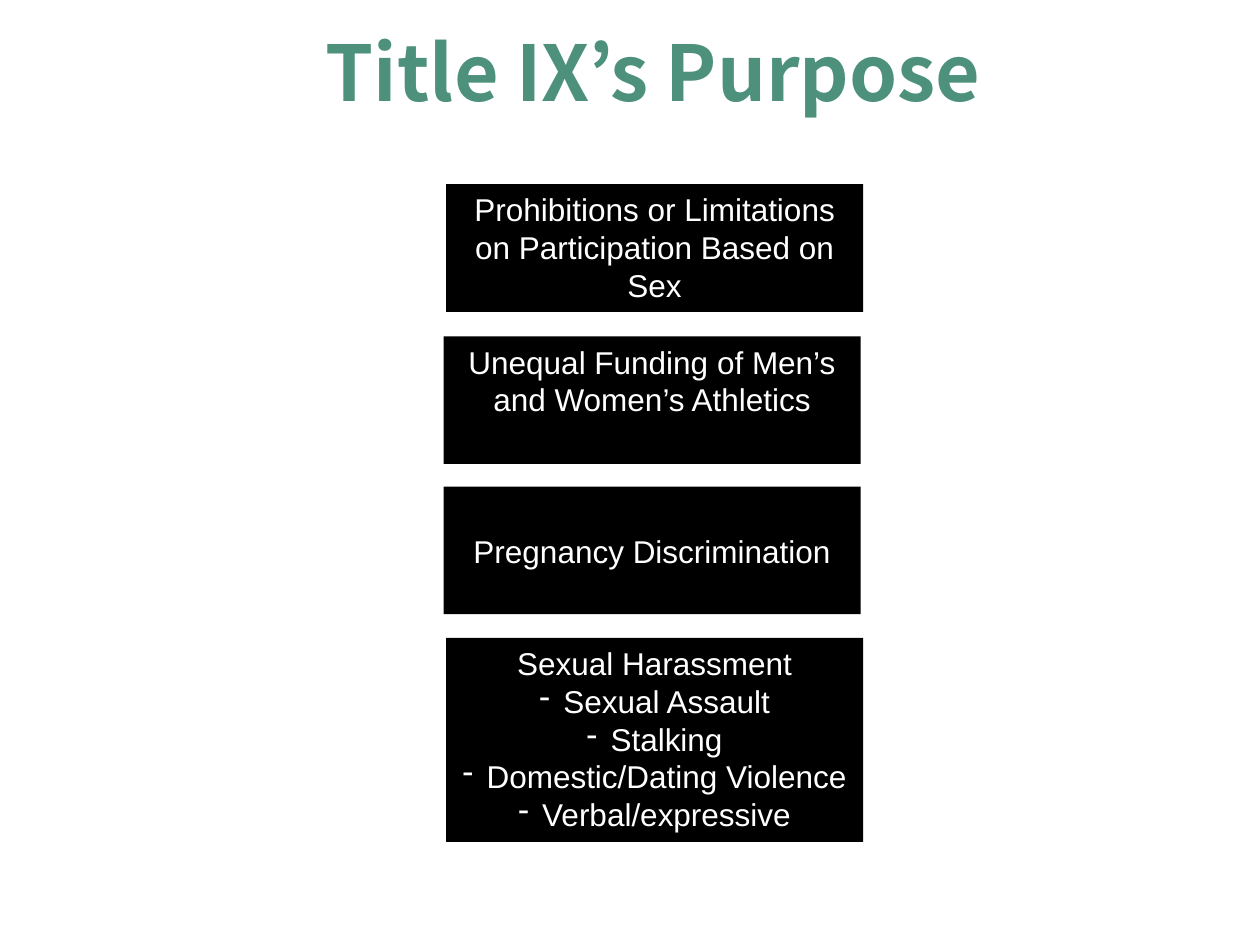
from dataclasses import dataclass
from lxml import etree
from pptx import Presentation
from pptx.dml.color import RGBColor
from pptx.enum.shapes import MSO_SHAPE
from pptx.enum.text import MSO_ANCHOR, PP_ALIGN
from pptx.oxml.ns import qn
from pptx.util import Inches, Pt

RECT = MSO_SHAPE.RECTANGLE
TOP, MIDDLE = MSO_ANCHOR.TOP, MSO_ANCHOR.MIDDLE
CENTER = PP_ALIGN.CENTER
GREEN = RGBColor(0x4D, 0x91, 0x7C)
BLACK = RGBColor(0, 0, 0)
WHITE = RGBColor(0xFF, 0xFF, 0xFF)

WIDE, HIGH = Inches(10), Inches(7.5)
BOX_W = 0.331
INDENT = Inches(0.19)


@dataclass
class Box:
    """A topic box, placed by shares of the slide's size."""
    left: float
    top: float
    high: float
    head: str
    items: tuple[str, ...] = ()
    anchor: MSO_ANCHOR = TOP


BOXES = [
    Box(0.354, 0.195, 0.135,
        "Prohibitions or Limitations on Participation Based on Sex"),
    Box(0.352, 0.356, 0.135, "Unequal Funding of Men’s and Women’s Athletics"),
    Box(0.352, 0.515, 0.135, "Pregnancy Discrimination", anchor=MIDDLE),
    Box(0.354, 0.675, 0.216, "Sexual Harassment",
        ("Sexual Assault", "Stalking", "Domestic/Dating Violence",
         "Verbal/expressive")),
]


def add_dash(para) -> None:
    props = para._p.get_or_add_pPr()
    props.set("marL", str(INDENT))
    props.set("indent", str(-INDENT))
    etree.SubElement(props, qn("a:buChar")).set("char", "-")


def write(frame, head: str, items: tuple[str, ...] = (), *, size: float = 18,
          face: str = "Arial", color: RGBColor = WHITE, bold: bool = False,
          anchor: MSO_ANCHOR = TOP) -> None:
    """Fill a frame with a centred head and dashed items below it."""
    frame.word_wrap = True
    frame.vertical_anchor = anchor
    for num, line in enumerate((head, *items)):
        para = frame.add_paragraph() if num else frame.paragraphs[0]
        para.alignment = CENTER
        if num:
            add_dash(para)
        run = para.add_run()
        run.text = line
        font = run.font
        font.size, font.name, font.bold = Pt(size), face, bold
        font.color.rgb = color


def draw_title(slide, text: str) -> None:
    shape = slide.shapes.add_textbox(
        int(WIDE * 0.081), int(HIGH * 0.024), int(WIDE * 0.875), int(HIGH * 0.101))
    frame = shape.text_frame
    frame.margin_top = frame.margin_bottom = 0
    write(frame, text, size=44, face="Noto Sans CJK KR", color=GREEN,
          bold=True, anchor=MIDDLE)


def draw_box(slide, box: Box) -> None:
    shape = slide.shapes.add_shape(
        RECT, int(WIDE * box.left), int(HIGH * box.top),
        int(WIDE * BOX_W), int(HIGH * box.high))
    shape.shadow.inherit = False
    shape.fill.solid()
    shape.fill.fore_color.rgb = BLACK
    shape.line.fill.background()
    write(shape.text_frame, box.head, box.items, anchor=box.anchor)


def main() -> None:
    deck = Presentation()
    deck.slide_width, deck.slide_height = WIDE, HIGH
    slide = deck.slides.add_slide(deck.slide_layouts[6])
    draw_title(slide, "Title IX’s Purpose")
    for box in BOXES:
        draw_box(slide, box)
    deck.save("out.pptx")


if __name__ == "__main__":
    main()
